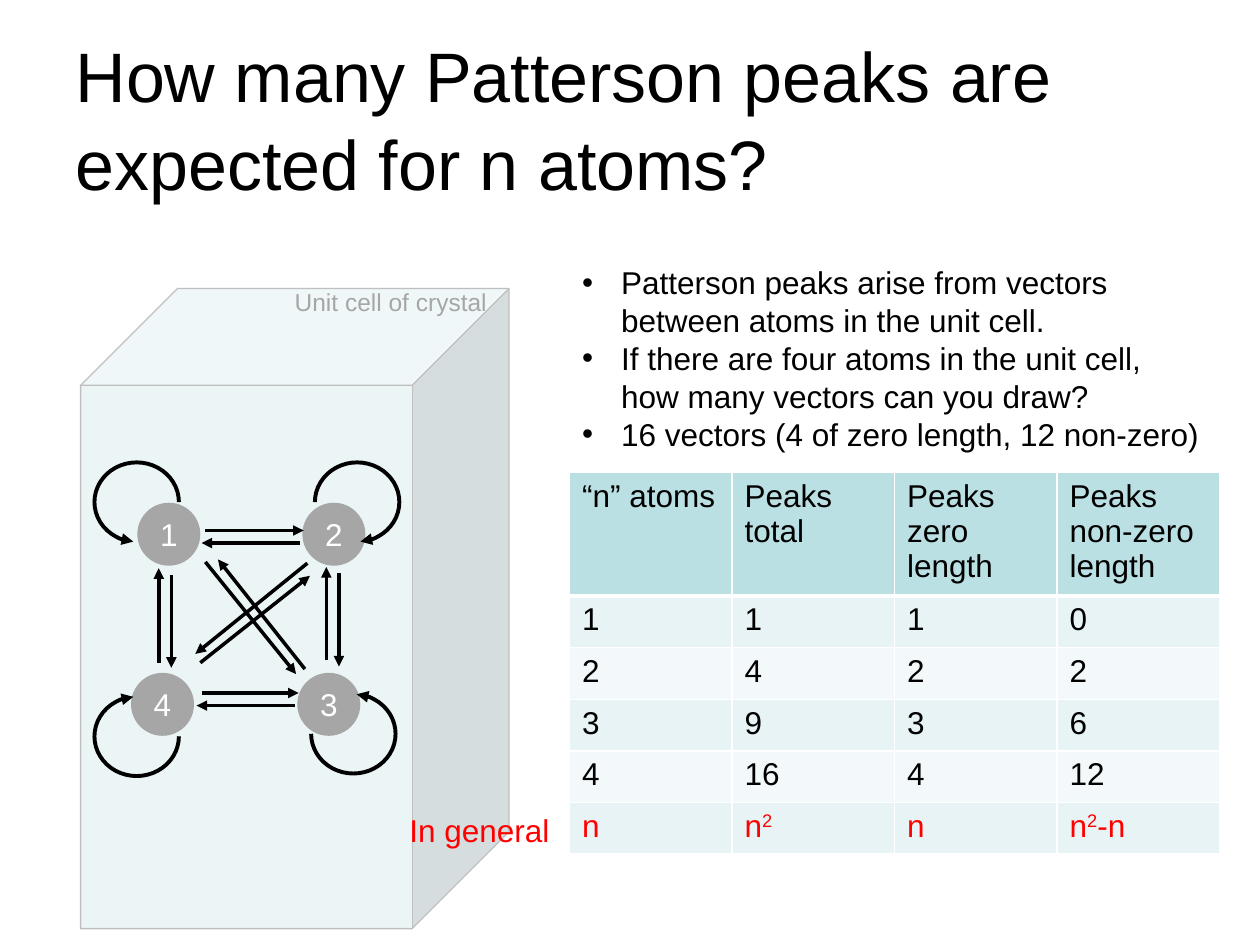
from lxml import etree
from pptx import Presentation
from pptx.dml.color import RGBColor
from pptx.enum.shapes import MSO_CONNECTOR as Connector, MSO_SHAPE as Shape
from pptx.enum.text import MSO_ANCHOR as Anchor, MSO_AUTO_SIZE as AutoSize, PP_ALIGN as Align
from pptx.oxml.ns import qn
from pptx.util import Inches, Pt

BLACK = RGBColor(0x00, 0x00, 0x00)
WHITE = RGBColor(0xFF, 0xFF, 0xFF)
RED = RGBColor(0xFF, 0x00, 0x00)
ATOM_GRAY = RGBColor(0xA6, 0xA6, 0xA6)
EDGE_GRAY = RGBColor(0xBF, 0xBF, 0xBF)
CELL_TINT = RGBColor(0xDA, 0xED, 0xEF)
HEADER_TEAL = RGBColor(0xBB, 0xE0, 0xE3)
BAND_DARK = RGBColor(0xE7, 0xF3, 0xF4)
BAND_LIGHT = RGBColor(0xF3, 0xF9, 0xFA)

ATOMS = [("1", 1.09, 3.99), ("2", 2.4, 3.99), ("4", 1.04, 5.34), ("3", 2.36, 5.34)]
SELF_VECTORS = [
    (0.75, 3.67, ""),
    (2.5, 3.67, "H"),
    (0.75, 5.53, "V"),
    (2.47, 5.51, "HV"),
]
VECTORS = [
    (1.63, 4.21, 2.41, 4.21), (2.38, 4.31, 1.6, 4.31),
    (1.6, 5.5, 2.37, 5.5), (2.34, 5.6, 1.56, 5.6),
    (1.36, 4.56, 1.36, 5.3), (1.26, 5.26, 1.26, 4.51),
    (2.69, 4.55, 2.69, 5.29), (2.59, 5.24, 2.59, 4.5),
    (1.59, 5.26, 2.46, 4.57), (2.44, 4.47, 1.55, 5.19),
    (2.42, 5.31, 1.73, 4.44), (1.63, 4.46, 2.35, 5.35),
]
BULLETS = [
    "Patterson peaks arise from vectors between atoms in the unit cell.",
    "If there are four atoms in the unit cell, how many vectors can you draw?",
    "16 vectors (4 of zero length, 12 non-zero)",
]
PEAK_COUNTS = [
    ["“n” atoms", "Peaks total", "Peaks zero length", "Peaks non-zero length"],
    ["1", "1", "1", "0"],
    ["2", "4", "2", "2"],
    ["3", "9", "3", "6"],
    ["4", "16", "4", "12"],
    ["n", "n^2", "n", "n^2^-n"],
]


class SlideBuilder:
    font_name = "Arial"
    body_size = 18

    def __init__(self, slide):
        self.slide = slide
        self.shapes = slide.shapes

    def style(self, paragraph, color=BLACK, size=body_size):
        for run in paragraph.runs:
            run.font.name = self.font_name
            run.font.size = Pt(size)
            run.font.bold = False
            run.font.color.rgb = color

    def place(self, item, left, top, width, height):
        item.left, item.top = Inches(left), Inches(top)
        item.width, item.height = Inches(width), Inches(height)

    def title(self, text, box):
        heading = self.shapes.title
        self.place(heading, *box)
        frame = heading.text_frame
        frame.text = text
        frame.auto_size = AutoSize.NONE
        frame.vertical_anchor = Anchor.MIDDLE
        frame.paragraphs[0].alignment = Align.LEFT
        frame.paragraphs[0].line_spacing = 1.05
        self.style(frame.paragraphs[0], size=40)

    def bullets(self, lines, box):
        body = self.slide.placeholders[1]
        self.place(body, *box)
        frame = body.text_frame
        frame.text = "\n".join(lines)
        frame.auto_size = AutoSize.NONE
        for paragraph in frame.paragraphs:
            paragraph.space_before = Pt(0)
            properties = paragraph._p.get_or_add_pPr()
            properties.set("marL", str(Inches(0.31)))
            properties.set("indent", str(-Inches(0.31)))
            etree.SubElement(properties, qn("a:buFont"), typeface=self.font_name)
            etree.SubElement(properties, qn("a:buChar"), char="•")
            self.style(paragraph)

    def label(self, text, box, color, size=body_size):
        caption = self.shapes.add_textbox(*map(Inches, box))
        frame = caption.text_frame
        frame.text = text
        frame.word_wrap = False
        frame.auto_size = AutoSize.SHAPE_TO_FIT_TEXT
        self.style(frame.paragraphs[0], color, size)

    def preset(self, kind, left, top, width, height):
        item = self.shapes.add_shape(kind, *map(Inches, (left, top, width, height)))
        item.shadow.inherit = False
        return item

    def unit_cell(self, box):
        cube = self.preset(Shape.CUBE, *box)
        cube.adjustments[0] = 0.226
        cube.fill.solid()
        cube.fill.fore_color.rgb = CELL_TINT
        tint = cube._element.spPr.find(".//" + qn("a:srgbClr"))
        etree.SubElement(tint, qn("a:alpha"), val="50000")
        cube.line.color.rgb = EDGE_GRAY
        cube.line.width = Pt(0.75)

    def atom(self, number, left, top):
        circle = self.preset(Shape.OVAL, left, top, 0.5, 0.5)
        circle.fill.solid()
        circle.fill.fore_color.rgb = ATOM_GRAY
        circle.line.fill.background()
        frame = circle.text_frame
        frame.text = number
        frame.vertical_anchor = Anchor.MIDDLE
        frame.paragraphs[0].alignment = Align.CENTER
        self.style(frame.paragraphs[0], WHITE)

    def arrow_line(self, item, width, end):
        item.line.color.rgb = BLACK
        item.line.width = Pt(width)
        etree.SubElement(item.line._get_or_add_ln(), qn(end), type="triangle")

    def self_vector(self, left, top, flips):
        loop = self.preset(Shape.ARC, left, top, 0.67, 0.63)
        loop.adjustments[0] = 56.923
        loop.adjustments[1] = 0
        loop.fill.background()
        for axis in flips:
            loop._element.spPr.xfrm.set("flip" + axis, "1")
        self.arrow_line(loop, 2.25, "a:headEnd")

    def vector(self, *ends):
        arrow = self.shapes.add_connector(Connector.STRAIGHT, *map(Inches, ends))
        self.arrow_line(arrow, 2, "a:tailEnd")
        etree.SubElement(arrow._element.spPr, qn("a:effectLst"))

    def cell_borders(self, cell, bottom):
        properties = cell._tc.get_or_add_tcPr()
        sides = [("a:lnL", 1), ("a:lnR", 1), ("a:lnT", 1), ("a:lnB", bottom)]
        for position, (side, width) in enumerate(sides):
            border = etree.Element(qn(side), w=str(Pt(width)))
            fill = etree.SubElement(border, qn("a:solidFill"))
            etree.SubElement(fill, qn("a:srgbClr"), val=str(WHITE))
            properties.insert(position, border)

    def cell_text(self, cell, text, color):
        paragraph = cell.text_frame.paragraphs[0]
        for position, part in enumerate(text.split("^")):
            run = paragraph.add_run()
            run.text = part
            if position % 2:
                run.font._element.set("baseline", "30000")
        self.style(paragraph, color)

    def table(self, rows, box):
        frame = self.shapes.add_table(len(rows), len(rows[0]), *map(Inches, box))
        grid = frame.table
        for column in grid.columns:
            column.width = Inches(1.29)
        for index, texts in enumerate(rows):
            grid.rows[index].height = Inches(0.41 if index else 0.98)
            band = BAND_DARK if index % 2 else BAND_LIGHT
            color = RED if index == len(rows) - 1 else BLACK
            for cell, text in zip(grid.rows[index].cells, texts):
                cell.fill.solid()
                cell.fill.fore_color.rgb = band if index else HEADER_TEAL
                self.cell_borders(cell, 1 if index else 3)
                self.cell_text(cell, text, color)


def main():
    deck = Presentation()
    deck.slide_width, deck.slide_height = Inches(10), Inches(7.5)
    builder = SlideBuilder(deck.slides.add_slide(deck.slide_layouts[1]))
    builder.title("How many Patterson peaks are expected for n atoms?", (0.5, 0.3, 9, 1.25))
    builder.bullets(BULLETS, (4.52, 2.04, 5.15, 1.62))
    builder.unit_cell((0.64, 2.29, 3.4, 5.08))
    for atom in ATOMS:
        builder.atom(*atom)
    for loop in SELF_VECTORS:
        builder.self_vector(*loop)
    for ends in VECTORS:
        builder.vector(*ends)
    builder.table(PEAK_COUNTS, (4.52, 3.75, 5.16, 3.03))
    builder.label("In general", (3.15, 6.39, 1.32, 0.4), RED)
    builder.label("Unit cell of crystal", (2.24, 2.23, 1.74, 0.34), ATOM_GRAY, 14)
    deck.save("out.pptx")


if __name__ == "__main__":
    main()
